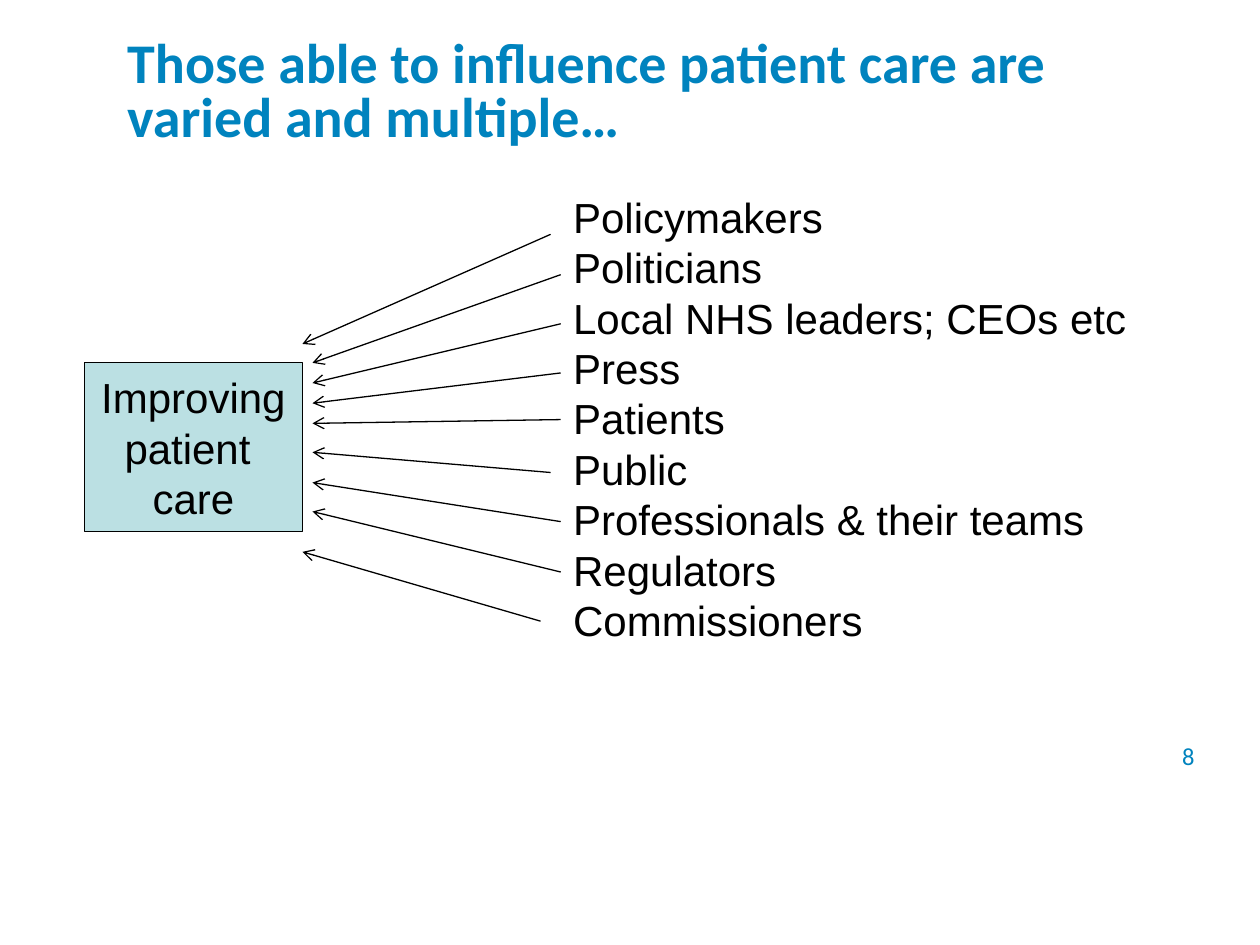
from lxml import etree
from pptx import Presentation
from pptx import util as u
from pptx.dml.color import RGBColor
from pptx.enum import shapes, text
from pptx.oxml.ns import qn

BLUE, BLACK, PALE = "0083BE", "000000", "BBE0E3"
CARE_BOX = (0.67, 2.88, 1.73, 1.34)
LIST_BOX = (4.45, 1.47, 4.88, 3.74)

# Each entry: name, gap from list, height at list, gap from care box, height at care box
INFLUENCERS = [
    ("Policymakers", 0.08, 1.86, 0, 2.73),
    ("Politicians", 0, 2.18, 0.08, 2.88),
    ("Local NHS leaders; CEOs etc", 0, 2.57, 0.08, 3.04),
    ("Press", 0, 2.96, 0.08, 3.2),
    ("Patients", 0, 3.33, 0.08, 3.36),
    ("Public", 0.08, 3.75, 0.08, 3.59),
    ("Professionals & their teams", 0, 4.14, 0.08, 3.83),
    ("Regulators", 0, 4.54, 0.08, 4.06),
    ("Commissioners", 0.16, 4.93, 0, 4.38),
]


def colour(value):
    """Return the colour for a hex string."""
    return RGBColor.from_string(value)


def inches(box):
    """Return the numbers of a box as lengths."""
    return [u.Inches(value) for value in box]


def write(shape, lines, size, font, ink, align, anchor, bold=False, spacing=None):
    """Write one paragraph per line into a shape."""
    frame = shape.text_frame
    frame.word_wrap = True
    frame.auto_size = text.MSO_AUTO_SIZE.NONE
    frame.vertical_anchor = anchor
    for index, line in enumerate(lines):
        paragraph = frame.add_paragraph() if index else frame.paragraphs[0]
        paragraph.alignment = align
        paragraph.line_spacing = spacing
        run = paragraph.add_run()
        run.text = line
        run.font.size = u.Pt(size)
        run.font.name = font
        run.font.bold = bold
        run.font.color.rgb = colour(ink)


def add_title(slide, box):
    """Place the slide heading in the title placeholder."""
    title = slide.shapes.title
    title.left, title.top, title.width, title.height = inches(box)
    write(title, ["Those able to influence patient care are varied and multiple…"],
          32, "Calibri", BLUE, text.PP_ALIGN.LEFT, text.MSO_ANCHOR.MIDDLE, True, 0.8)


def add_page_number(slide, box):
    """Place the page number."""
    write(slide.shapes.add_textbox(*inches(box)), ["8"], 14, "Calibri", BLUE,
          text.PP_ALIGN.RIGHT, text.MSO_ANCHOR.TOP)


def add_care_box(slide, box):
    """Place the filled box naming the shared goal."""
    shape = slide.shapes.add_shape(shapes.MSO_SHAPE.RECTANGLE, *inches(box))
    shape.shadow.inherit = False
    shape.fill.solid()
    shape.fill.fore_color.rgb = colour(PALE)
    shape.line.color.rgb = colour(BLACK)
    shape.line.width = u.Pt(0.75)
    write(shape, ["Improving", "patient ", "care"], 24, "Arial", BLACK,
          text.PP_ALIGN.CENTER, text.MSO_ANCHOR.MIDDLE)


def add_influencers(slide, box):
    """Place the list of those who influence care."""
    write(slide.shapes.add_textbox(*inches(box)), [entry[0] for entry in INFLUENCERS],
          24, "Arial", BLACK, text.PP_ALIGN.LEFT, text.MSO_ANCHOR.TOP)


def add_arrow(slide, start, end):
    """Draw a thin arrow between two points."""
    arrow = slide.shapes.add_connector(shapes.MSO_CONNECTOR.STRAIGHT,
                                       *inches(start + end))
    arrow.line.color.rgb = colour(BLACK)
    arrow.line.width = u.Pt(0.75)
    properties = arrow.element.spPr
    line = properties.find(qn("a:ln"))
    etree.SubElement(line, qn("a:tailEnd"), type="arrow")
    etree.SubElement(properties, qn("a:effectLst"))


def add_arrows(slide, list_box, care_box):
    """Draw an arrow from each influencer towards the care box."""
    list_left = list_box[0]
    care_right = care_box[0] + care_box[2]
    for _, list_gap, list_y, care_gap, care_y in INFLUENCERS:
        add_arrow(slide, (list_left - list_gap, list_y), (care_right + care_gap, care_y))


def main():
    """Build and save the presentation."""
    presentation = Presentation()
    presentation.slide_width, presentation.slide_height = inches((10, 7.5))
    slide = presentation.slides.add_slide(presentation.slide_layouts[5])
    add_title(slide, (0.91, 0.29, 8.25, 0.92))
    add_page_number(slide, (7.5, 5.83, 2.08, 0.5))
    add_care_box(slide, CARE_BOX)
    add_influencers(slide, LIST_BOX)
    add_arrows(slide, LIST_BOX, CARE_BOX)
    presentation.save("out.pptx")


if __name__ == "__main__":
    main()
